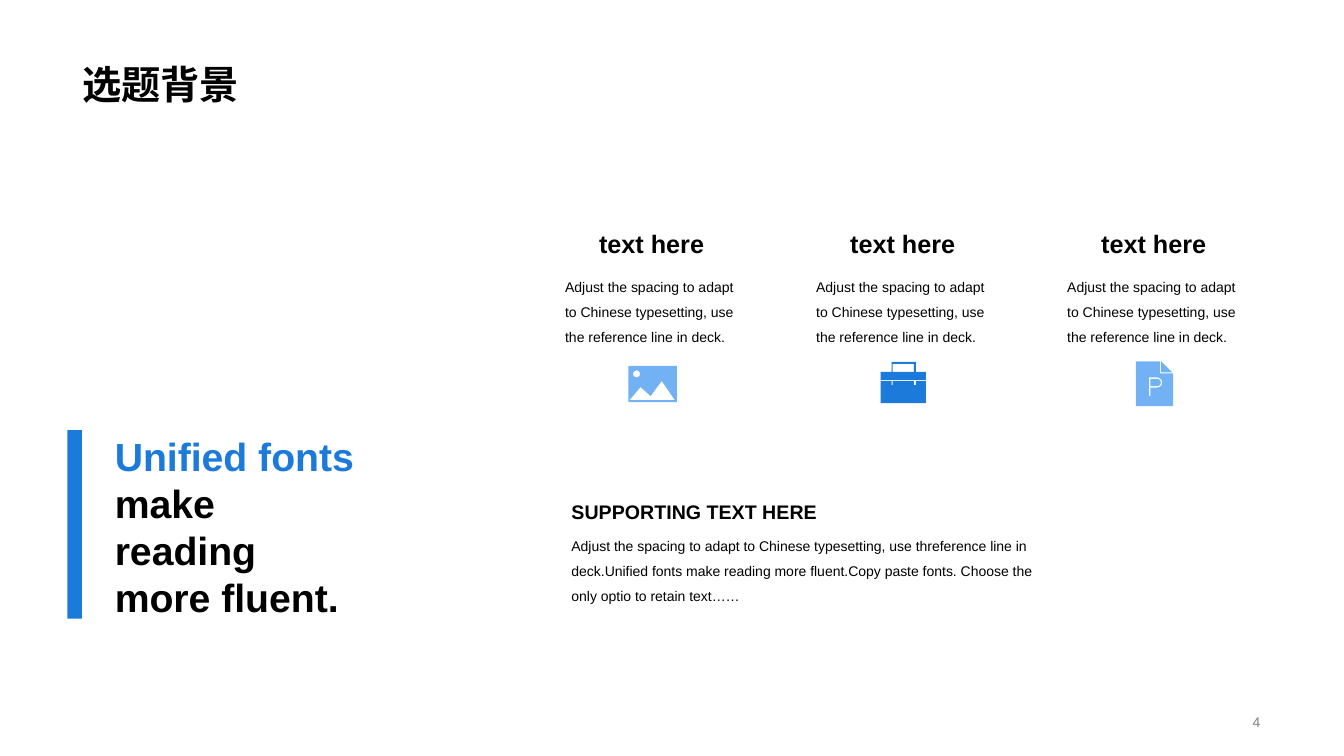
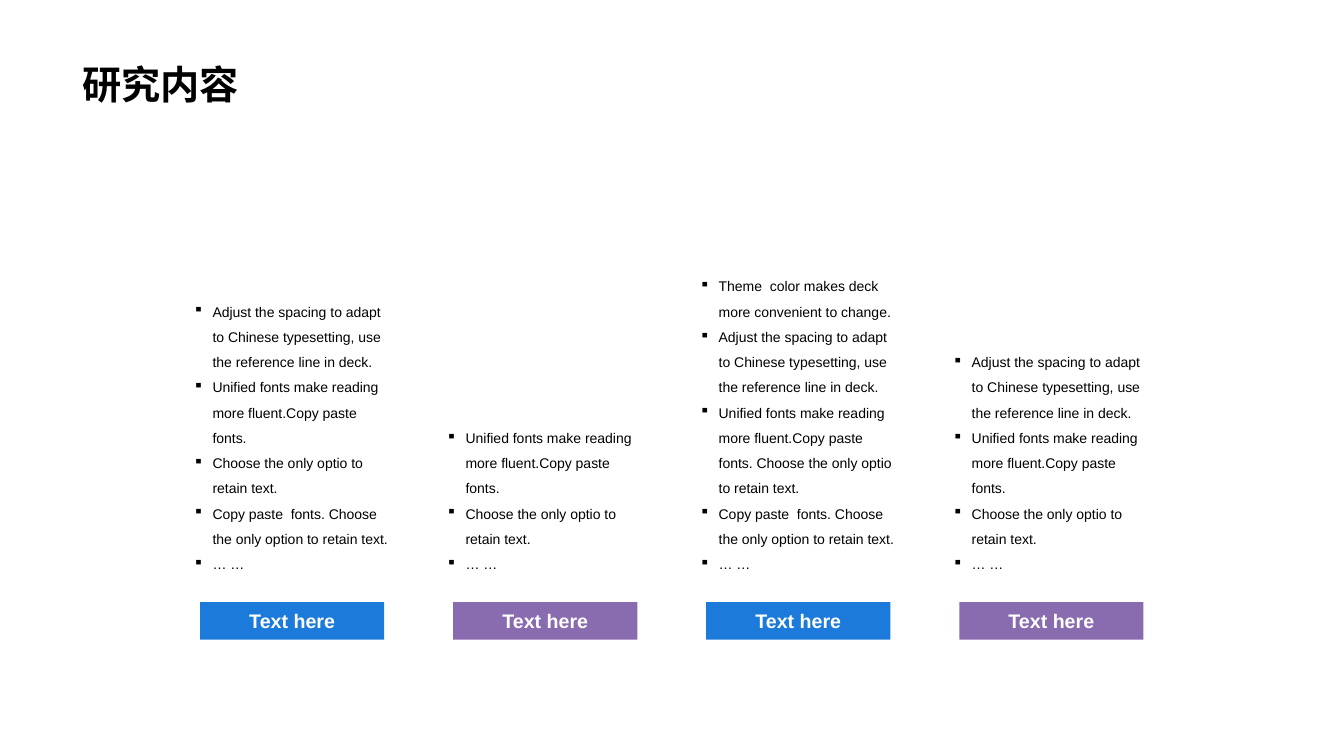
from math import cos, pi, sin

from lxml import etree
from pptx import Presentation
from pptx.dml.color import RGBColor
from pptx.enum.shapes import MSO_SHAPE
from pptx.enum.text import MSO_ANCHOR, MSO_AUTO_SIZE, PP_ALIGN
from pptx.oxml.ns import qn
from pptx.util import Inches, Pt

RECT = MSO_SHAPE.RECTANGLE
TOP, MIDDLE, BOTTOM = MSO_ANCHOR.TOP, MSO_ANCHOR.MIDDLE, MSO_ANCHOR.BOTTOM
LEFT, CENTER, RIGHT = PP_ALIGN.LEFT, PP_ALIGN.CENTER, PP_ALIGN.RIGHT
GROW = MSO_AUTO_SIZE.SHAPE_TO_FIT_TEXT

WIDE, HIGH = Inches(13.333), Inches(7.5)
FONT = "Arial"
BLACK, WHITE, GREY = "000000", "FFFFFF", "808080"
BLUE, SKY, PLUM = "1B7ADA", "72B2F4", "896BB0"

ADAPT = ("Adjust the spacing to adapt to Chinese typesetting, "
         "use the reference line in deck.")
UNIFY = "Unified fonts make reading more fluent.Copy paste fonts."
CHOOSE = "Choose the only optio to retain text."
COPY = "Copy paste  fonts. Choose the only option to retain text."
THEME = "Theme  color makes deck more convenient to change."
MORE = "… …"
SUPPORT = ("Adjust the spacing to adapt to Chinese typesetting, use threference "
           "line in deck.Unified fonts make reading more fluent.Copy paste fonts. "
           "Choose the only optio to retain text……")


def tint(text):
    return RGBColor.from_string(text)


def place(x, y, w, h):
    """Turn percent of the slide's width and height into lengths."""
    return [round(part * size / 100)
            for part, size in zip((x, y, w, h), (WIDE, HIGH, WIDE, HIGH))]


def paint(shape, color):
    shape.shadow.inherit = False
    shape.fill.solid()
    shape.fill.fore_color.rgb = tint(color)
    shape.line.fill.background()


def dot(para):
    """Give the paragraph a square bullet with a hanging indent."""
    props = para._p.get_or_add_pPr()
    props.set("marL", str(Inches(0.19)))
    props.set("indent", str(-Inches(0.19)))
    etree.SubElement(props, qn("a:buChar")).set("char", "▪")


def write(frame, lines, size, color=BLACK, bold=False, align=LEFT,
          anchor=TOP, gap=1, dots=False):
    frame.vertical_anchor = anchor
    for i, line in enumerate(lines):
        para = frame.add_paragraph() if i else frame.paragraphs[0]
        para.text = line
        para.alignment = align
        para.line_spacing = gap
        if dots:
            dot(para)
        font = para.font
        font.name, font.size, font.bold = FONT, Pt(size), bold
        font.color.rgb = tint(color)


def label(slide, box, lines, size, grow=True, **style):
    frame = slide.shapes.add_textbox(*place(*box)).text_frame
    frame.word_wrap = True
    if grow:
        frame.auto_size = GROW
    write(frame, lines, size, **style)
    return frame


def block(slide, box, color):
    shape = slide.shapes.add_shape(RECT, *place(*box))
    paint(shape, color)
    return shape


def arc(x, y, r, start, end, steps=16):
    """Points on a circle between two angles, clockwise from the right."""
    turns = [start + (end - start) * i / steps for i in range(steps + 1)]
    return [(x + r * cos(t), y + r * sin(t)) for t in turns]


def icon(slide, x, y, loops, color):
    """Draw closed outlines, in hundredths of an inch, from a corner."""
    left, top, _, _ = place(x, y, 0, 0)
    unit = Inches(0.01)
    pen = None
    for loop in loops:
        spots = [(left + a * unit, top + b * unit) for a, b in loop]
        if pen is None:
            pen = slide.shapes.build_freeform(*spots[0])
        else:
            pen.move_to(*spots[0])
        pen.add_line_segments(spots[1:], close=True)
    paint(pen.convert_to_shape(), color)


def bounds(x, y, right, low):
    return [(x, y), (right, y), (right, low), (x, low)]


PHOTO = [
    bounds(0, 0, 48, 36),
    [(33, 15), (22, 30), (12, 21), (1, 34), (46, 34)],
    arc(8, 8, 3.5, 0, 2 * pi),
]
CASE = [
    [(0, 19), (11, 19), (11, 23), (12, 23), (12, 19), (33, 19), (33, 23),
     (35, 23), (35, 19), (45, 19), (45, 41), (0, 41)],
    [(0, 10), (11, 10), (11, 0), (35, 0), (35, 10), (45, 10), (45, 18), (0, 18)],
    bounds(12, 2, 33, 10),
]
PAGE = [
    [(0, 0), (24, 0), (24, 12), (37, 12), (37, 44.5), (0, 44.5)],
    [(13, 16), *arc(21, 21, 5, -pi / 2, pi / 2), (14.3, 26), (14.3, 34.5),
     (13, 34.5)],
    [(14.3, 17.3), *arc(21, 21, 3.7, -pi / 2, pi / 2), (14.3, 24.7)],
    [(25, 0), (36, 11), (25, 11)],
]


def start(deck, title):
    slide = deck.slides.add_slide(deck.slide_layouts[6])
    label(slide, (5.4, 0, 89.1, 14.93), [title], 28, grow=False, bold=True,
          anchor=BOTTOM, gap=0.9)
    return slide


def card(slide, x, art, shift, y, color):
    label(slide, (x + 0.05, 29.55, 14.25, 5.33), ["text here"], 18,
          bold=True, align=CENTER)
    label(slide, (x, 35.07, 15.08, 9.87), [ADAPT], 10, gap=1.5)
    icon(slide, x + shift, y, art, color)


def background(deck):
    slide = start(deck, "选题背景")
    label(slide, (72.68, 93.87, 21.83, 3.2), ["4"], 10, grow=False,
          color=GREY, align=RIGHT, anchor=MIDDLE)
    block(slide, (5.02, 56.9, 1.08, 24.93), BLUE)
    claim = label(slide, (7.8, 56.53, 19.65, 26.53),
                  ["Unified fonts", "make reading more fluent."], 28, bold=True)
    claim.paragraphs[0].font.color.rgb = tint(BLUE)
    label(slide, (41.78, 63.87, 24.08, 5.47), ["SUPPORTING TEXT HERE"], 14,
          bold=True, gap=1.5)
    label(slide, (41.78, 69.33, 36.6, 11.47), [SUPPORT], 10, gap=1.5)
    cards = [(PHOTO, 5.45, 48.4, SKY), (CASE, 5.53, 47.87, BLUE),
             (PAGE, 5.85, 47.8, SKY)]
    for i, parts in enumerate(cards):
        card(slide, 41.31 + 18.68 * i, *parts)


def stack(slide, x, top, lines, color):
    """A bulleted list that stands on a coloured tag."""
    label(slide, (x, top, 16.2, 76.37 - top), lines, 10, anchor=BOTTOM,
          gap=1.5, dots=True)
    tag = block(slide, (x + 1.24, 79.63, 13.7, 4.97), color).text_frame
    tag.word_wrap = False
    write(tag, ["Text here"], 14, color=WHITE, bold=True, align=CENTER,
          anchor=MIDDLE)


def content(deck):
    slide = start(deck, "研究内容")
    stacks = [
        (41.73, [ADAPT, UNIFY, CHOOSE, COPY, MORE], BLUE),
        (58.67, [UNIFY, CHOOSE, MORE], PLUM),
        (35.07, [THEME, ADAPT, f"{UNIFY} {CHOOSE}", COPY, MORE], BLUE),
        (48.53, [ADAPT, UNIFY, CHOOSE, MORE], PLUM),
    ]
    for i, parts in enumerate(stacks):
        stack(slide, 13.65 + 18.83 * i, *parts)


def main():
    deck = Presentation()
    deck.slide_width, deck.slide_height = WIDE, HIGH
    background(deck)
    content(deck)
    deck.save("out.pptx")


if __name__ == "__main__":
    main()
